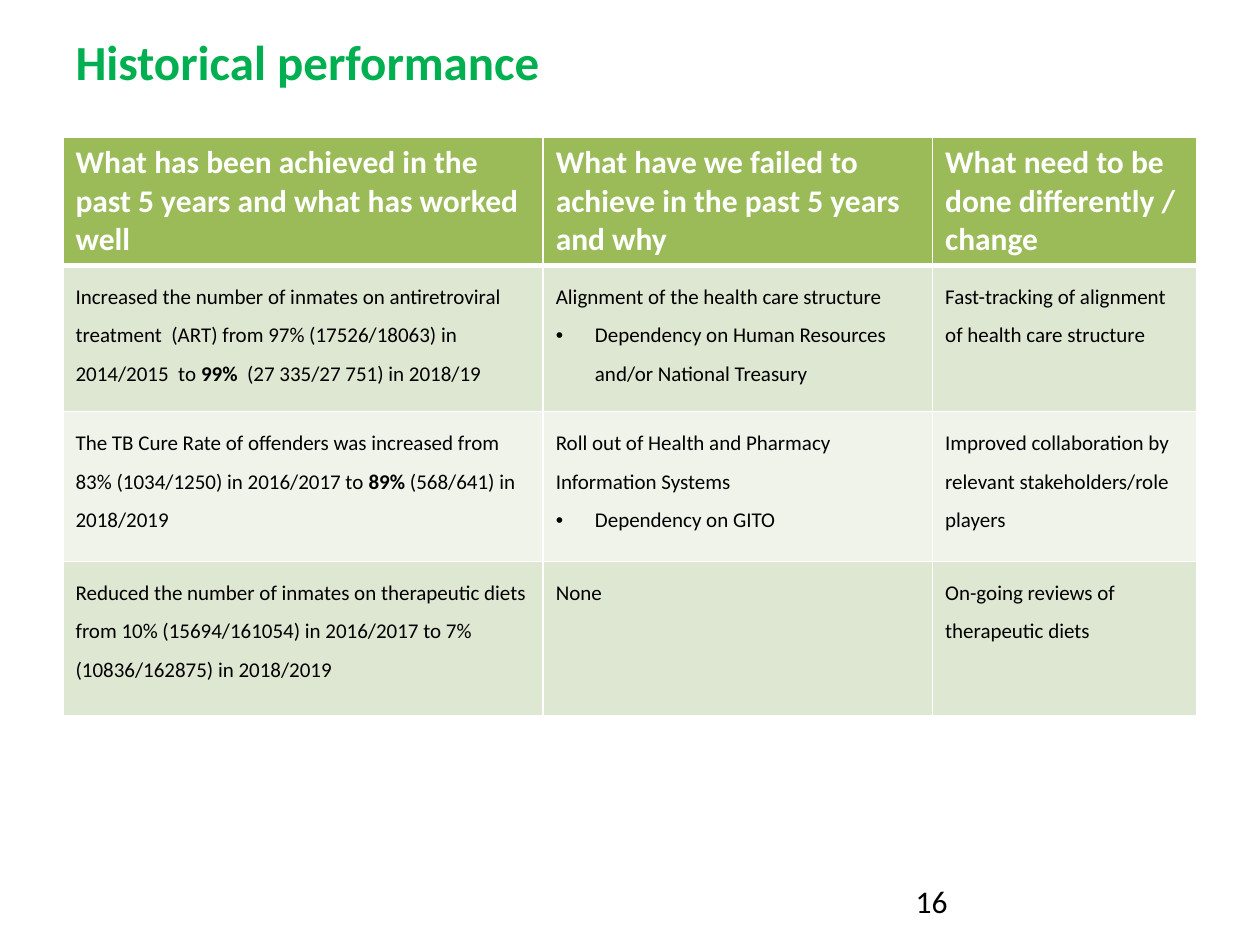
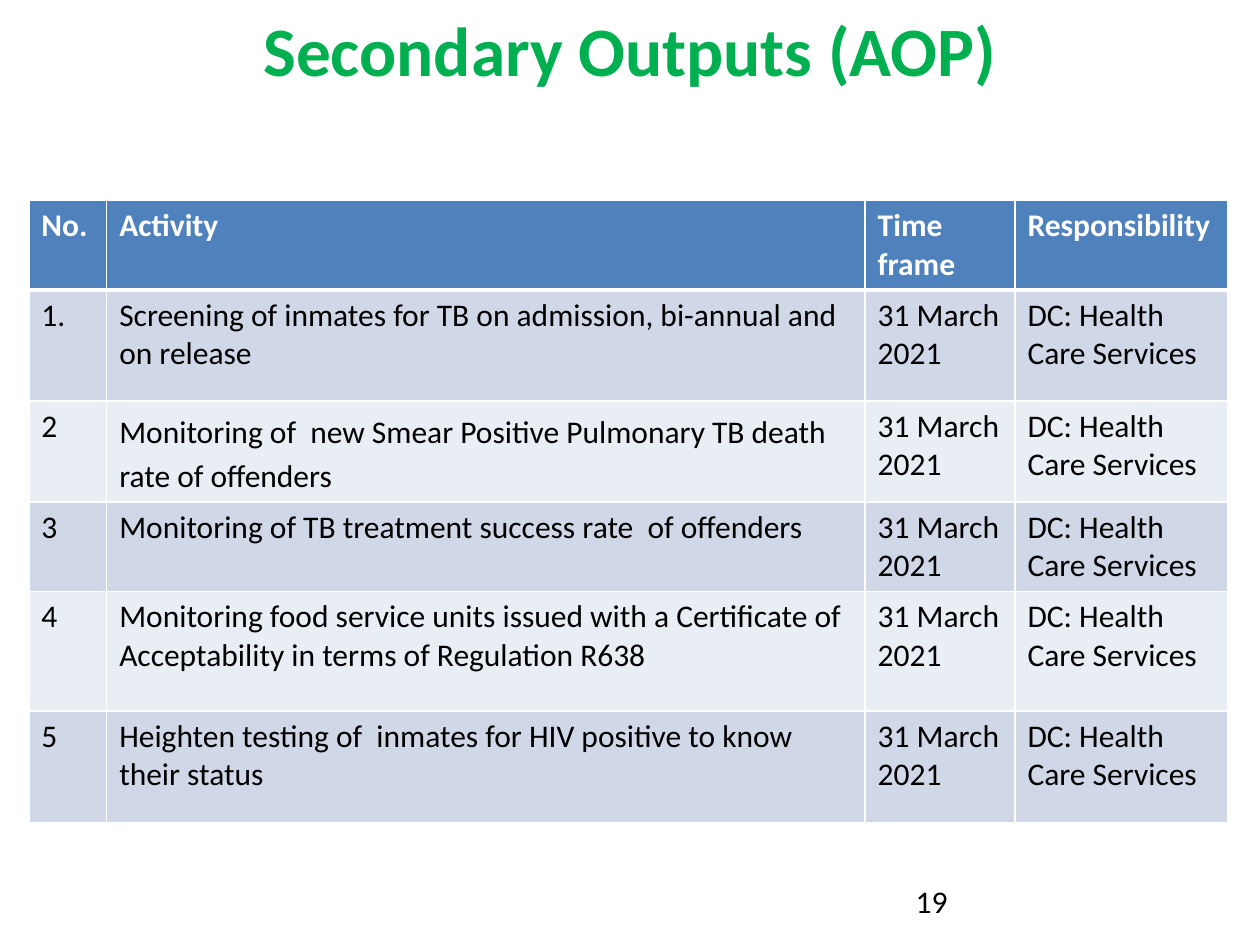
from lxml import etree
from pptx import Presentation
from pptx.dml.color import RGBColor
from pptx.enum.text import MSO_ANCHOR, MSO_AUTO_SIZE, PP_ALIGN
from pptx.oxml.ns import qn
from pptx.util import Cm, Pt

LEFT, CENTER = PP_ALIGN.LEFT, PP_ALIGN.CENTER
TOP, MIDDLE = MSO_ANCHOR.TOP, MSO_ANCHOR.MIDDLE
NO_FIT = MSO_AUTO_SIZE.NONE
FONT = "Calibri"
TITLE_GREEN = RGBColor(0x00, 0xB0, 0x50)
WHITE = RGBColor(0xFF, 0xFF, 0xFF)
BLACK = RGBColor(0x00, 0x00, 0x00)
GREENS = (RGBColor(0x9B, 0xBB, 0x59), RGBColor(0xDE, 0xE7, 0xD1), RGBColor(0xEF, 0xF3, 0xEA))
BLUES = (RGBColor(0x4F, 0x81, 0xBD), RGBColor(0xD0, 0xD8, 0xE8), RGBColor(0xE9, 0xED, 0xF4))

BULLET = "• "
BOLD_MARK = "**"
DUE, OWNER = "31 March 2021", "DC: Health Care Services"
ACTIVITIES = [
    ("1.", "Screening of inmates for TB on admission, bi-annual and on release"),
    ("2", "Monitoring of  new Smear Positive Pulmonary TB death rate of offenders"),
    ("3", "Monitoring of TB treatment success rate  of offenders"),
    ("4", "Monitoring food service units issued with a Certificate of Acceptability in terms of Regulation R638"),
    ("5", "Heighten testing of  inmates for HIV positive to know their status"),
]

PAGES = [
    {
        "title": "Historical performance",
        "title_box": (1.27, 0.51, 22.86, 1.45),
        "title_format": {"size": 28, "align": LEFT},
        "title_anchor": TOP,
        "number": "16",
        "table_at": (1.27, 2.77),
        "columns": (9.68, 7.85, 5.33),
        "heights": (2.46, 2.95, 3.02, 3.1),
        "palette": GREENS,
        "body_format": {"size": 12, "spacing": 1.5},
        "cell_formats": {},
        "rows": [
            ("What has been achieved in the past 5 years and what has worked well",
             "What have we failed to achieve in the past 5 years and why",
             "What need to be done differently / change"),
            ("Increased the number of inmates on antiretroviral treatment  (ART) from 97% "
             "(17526/18063) in 2014/2015  to **99%  **(27 335/27 751) in 2018/19",
             "Alignment of the health care structure\n"
             "• Dependency on Human Resources and/or National Treasury",
             "Fast-tracking of alignment of health care structure"),
            ("The TB Cure Rate of offenders was increased from 83% (1034/1250) in 2016/2017 "
             "to **89%** (568/641) in 2018/2019",
             "Roll out of Health and Pharmacy Information Systems\n• Dependency on GITO",
             "Improved collaboration by relevant stakeholders/role players"),
            ("Reduced the number of inmates on therapeutic diets from 10% (15694/161054) "
             "in 2016/2017 to 7% (10836/162875) in 2018/2019",
             "None",
             "On-going reviews of therapeutic diets"),
        ],
    },
    {
        "title": "Secondary Outputs (AOP)",
        "title_box": (1.27, 0, 22.86, 1.98),
        "title_format": {"size": 39.6, "align": CENTER},
        "title_anchor": MIDDLE,
        "number": "19",
        "table_at": (0.58, 4.04),
        "columns": (1.57, 15.29, 3.02, 4.29),
        "heights": (1.7, 2.24, 1.85, 1.7, 2.41, 2.24),
        "palette": BLUES,
        "body_format": {"size": 18},
        "cell_formats": {(2, 1): {"spacing": 1.15, "after": 10}},
        "rows": [("No.", "Activity", "Time\nframe", "Responsibility")]
        + [(number, activity, DUE, OWNER) for number, activity in ACTIVITIES],
    },
]


def write_text(frame, text, size=18, color=BLACK, bold=False, align=LEFT, spacing=None, after=None):
    """Fill a text frame: one paragraph a line, with marked bullets and bold spans."""
    frame.word_wrap = True
    for index, line in enumerate(text.split("\n")):
        para = frame.paragraphs[0] if index == 0 else frame.add_paragraph()
        if line.startswith(BULLET):
            line = line.removeprefix(BULLET)
            add_bullet(para)
        para.alignment = align
        if spacing:
            para.line_spacing = spacing
        if after:
            para.space_after = Pt(after)
        for position, part in enumerate(line.split(BOLD_MARK)):
            span = para.add_run()
            span.text = part
            span.font.name = FONT
            span.font.size = Pt(size)
            span.font.bold = bold or position % 2 == 1
            span.font.color.rgb = color


def add_bullet(para):
    """Give a paragraph a hanging round bullet."""
    properties = para._p.get_or_add_pPr()
    properties.set("marL", str(Cm(0.79)))
    properties.set("indent", str(-Cm(0.79)))
    etree.SubElement(properties, qn("a:buFont"), typeface="Arial")
    etree.SubElement(properties, qn("a:buChar"), char=BULLET.strip())


def add_borders(cell, widths):
    """Draw white borders on a cell, with widths in points by side."""
    properties = cell._tc.get_or_add_tcPr()
    for side, width in widths.items():
        line = etree.SubElement(properties, qn(f"a:ln{side}"), w=str(Pt(width)))
        fill = etree.SubElement(line, qn("a:solidFill"))
        etree.SubElement(fill, qn("a:srgbClr"), val=str(WHITE))


def add_grid(slide, page):
    """Add the page's table with a header and two alternating row colours."""
    rows, columns, heights = page["rows"], page["columns"], page["heights"]
    left, top = page["table_at"]
    table = slide.shapes.add_table(len(rows), len(columns), Cm(left), Cm(top),
                                   Cm(sum(columns)), Cm(sum(heights))).table
    table.horz_banding = False
    for column, width in zip(table.columns, columns):
        column.width = Cm(width)
    header_fill, *bands = page["palette"]
    for row_index, texts in enumerate(rows):
        table.rows[row_index].height = Cm(heights[row_index])
        is_header = row_index == 0
        fill = header_fill if is_header else bands[(row_index - 1) % 2]
        row_format = {"color": WHITE, "bold": True} if is_header else page["body_format"]
        borders = {"L": 1, "R": 1, "T": 3 if row_index == 1 else 1, "B": 3 if is_header else 1}
        for column_index, text in enumerate(texts):
            cell = table.cell(row_index, column_index)
            add_borders(cell, borders)
            cell.fill.solid()
            cell.fill.fore_color.rgb = fill
            cell_format = page["cell_formats"].get((row_index, column_index), {})
            write_text(cell.text_frame, text, **{**row_format, **cell_format})


def add_title(slide, page):
    """Move and format the title placeholder."""
    title = slide.shapes.title
    title.left, title.top, title.width, title.height = map(Cm, page["title_box"])
    frame = title.text_frame
    frame.auto_size = NO_FIT
    frame.vertical_anchor = page["title_anchor"]
    write_text(frame, page["title"], color=TITLE_GREEN, bold=True, **page["title_format"])


def main():
    """Build the deck and save it."""
    deck = Presentation()
    deck.slide_width, deck.slide_height = Cm(25.4), Cm(19.05)
    title_only = deck.slide_layouts.get_by_name("Title Only")
    for page in PAGES:
        slide = deck.slides.add_slide(title_only)
        add_title(slide, page)
        add_grid(slide, page)
        number_box = slide.shapes.add_textbox(Cm(18.21), Cm(17.65), Cm(5.92), Cm(1.02))
        write_text(number_box.text_frame, page["number"])
    deck.save("out.pptx")


if __name__ == "__main__":
    main()
